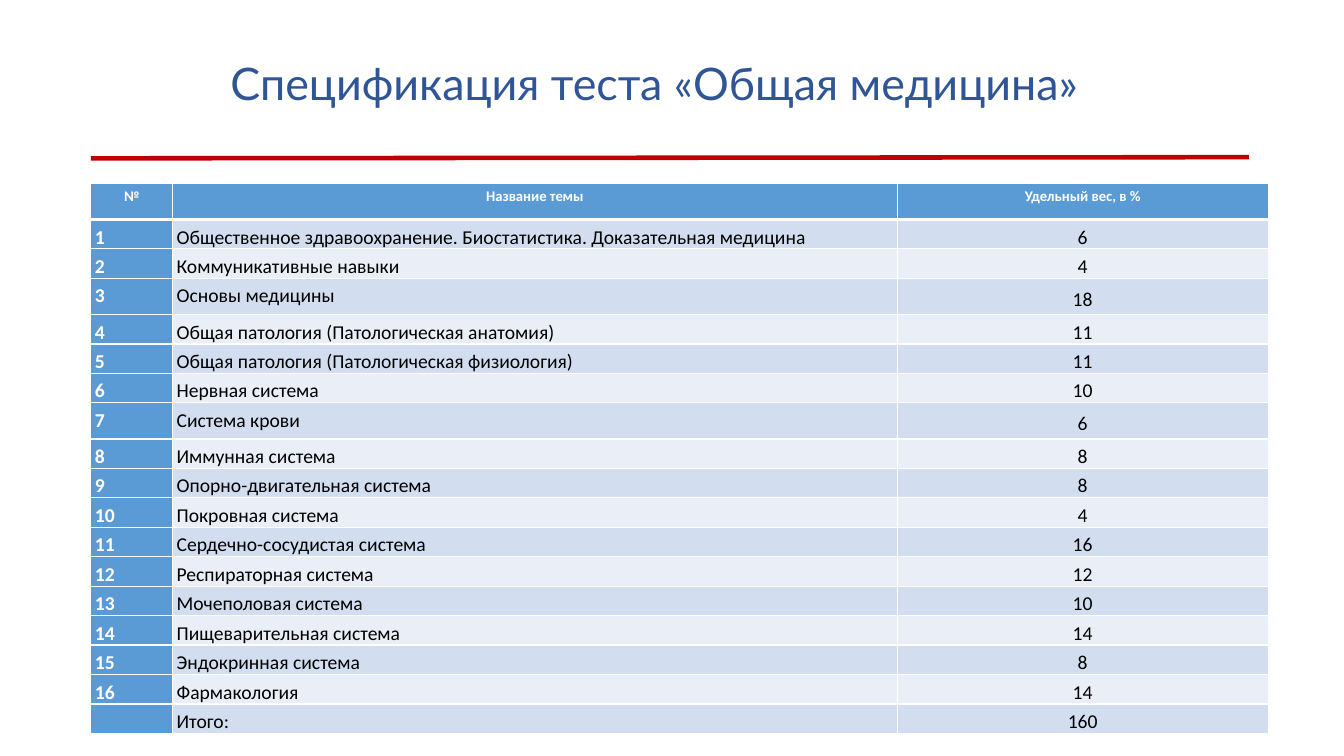
from dataclasses import dataclass
from typing import Any

from lxml import etree
from pptx import Presentation
from pptx.dml.color import RGBColor
from pptx.enum.shapes import MSO_CONNECTOR
from pptx.enum.text import MSO_ANCHOR, PP_ALIGN
from pptx.oxml.ns import qn
from pptx.util import Cm, Pt

LEFT, CENTER, JUSTIFY = PP_ALIGN.LEFT, PP_ALIGN.CENTER, PP_ALIGN.JUSTIFY
TOP, MIDDLE = MSO_ANCHOR.TOP, MSO_ANCHOR.MIDDLE
STRAIGHT = MSO_CONNECTOR.STRAIGHT

WHITE, BLACK, HEADER_BLUE = "FFFFFF", "000000", "5B9BD5"
BANDS = ("D2DEEF", "EAEFF7")
TITLE_BLUE, RULE_RED = "2F5597", "C00000"
THIN, THICK = 1, 3
BODY_SIZE = 14


@dataclass(frozen=True)
class Topic:
    name: str
    weight: int
    height: float = 0.69


@dataclass(frozen=True)
class CellStyle:
    fill: str
    color: str
    size: float
    bold: bool
    align: Any
    anchor: Any = TOP


HEADINGS = ("№", "Название темы", "Удельный вес, в %")
HEADER_HEIGHT = 0.91
COLUMN_WIDTHS = (2.06, 18.26, 9.35)
TOPICS = (
    Topic("Общественное здравоохранение. Биостатистика. Доказательная медицина", 6),
    Topic("Коммуникативные навыки", 4),
    Topic("Основы медицины", 18, 0.91),
    Topic("Общая патология (Патологическая анатомия)", 11),
    Topic("Общая патология (Патологическая физиология)", 11),
    Topic("Нервная система", 10),
    Topic("Система крови", 6, 0.91),
    Topic("Иммунная система", 8),
    Topic("Опорно-двигательная система", 8),
    Topic("Покровная система", 4),
    Topic("Сердечно-сосудистая система", 16),
    Topic("Респираторная система", 12),
    Topic("Мочеполовая система", 10),
    Topic("Пищеварительная система", 14),
    Topic("Эндокринная система", 8),
    Topic("Фармакология", 14),
)


def rgb(value: str) -> RGBColor:
    return RGBColor.from_string(value)


def apply(target: Any, values: dict[str, Any]) -> None:
    """Set each named attribute of the target."""
    for key, value in values.items():
        setattr(target, key, value)


def set_borders(cell: Any, top: float, bottom: float) -> None:
    properties = cell._tc.get_or_add_tcPr()
    widths = {"a:lnL": THIN, "a:lnR": THIN, "a:lnT": top, "a:lnB": bottom}
    for position, (tag, width) in enumerate(widths.items()):
        border = etree.Element(qn(tag), w=str(Pt(width)))
        fill = etree.SubElement(border, qn("a:solidFill"))
        etree.SubElement(fill, qn("a:srgbClr"), val=WHITE)
        properties.insert(position, border)


def fill_cell(cell: Any, text: str, style: CellStyle) -> None:
    apply(cell, {
        "margin_left": Cm(0.1), "margin_right": Cm(0.1),
        "margin_top": 0, "margin_bottom": 0,
        "vertical_anchor": style.anchor,
    })
    cell.fill.solid()
    cell.fill.fore_color.rgb = rgb(style.fill)
    paragraph = cell.text_frame.paragraphs[0]
    apply(paragraph, {"alignment": style.align, "line_spacing": 1.25})
    if not text:
        # An empty cell still takes its height from the end-of-paragraph size.
        end = etree.SubElement(paragraph._p, qn("a:endParaRPr"))
        end.set("sz", str(int(style.size * 100)))
        return
    run = paragraph.add_run()
    run.text = text
    apply(run.font, {"name": "Calibri", "size": Pt(style.size), "bold": style.bold})
    run.font.color.rgb = rgb(style.color)


def add_title(slide: Any) -> None:
    box = slide.shapes.add_textbox(Cm(1.47), Cm(1.02), Cm(30.05), Cm(3.68))
    frame = box.text_frame
    apply(frame, {
        "word_wrap": True, "vertical_anchor": MIDDLE, "margin_bottom": Cm(1.5),
    })
    paragraph = frame.paragraphs[0]
    apply(paragraph, {"alignment": CENTER, "line_spacing": 0.9})
    run = paragraph.add_run()
    run.text = "Спецификация теста «Общая медицина»"
    apply(run.font, {"name": "Lato", "size": Pt(32)})
    run.font.color.rgb = rgb(TITLE_BLUE)


def add_title_rule(slide: Any) -> None:
    rule = slide.shapes.add_connector(
        STRAIGHT, Cm(2.29), Cm(3.99), Cm(31.47), Cm(3.96))
    rule.line.width = Pt(3.25)
    rule.line.color.rgb = rgb(RULE_RED)
    etree.SubElement(rule._element.spPr, qn("a:effectLst"))


def add_topic_table(slide: Any) -> None:
    total = Topic("Итого:", sum(topic.weight for topic in TOPICS))
    rows = (*TOPICS, total)
    heights = (HEADER_HEIGHT, *(row.height for row in rows))
    table = slide.shapes.add_table(
        len(heights), len(COLUMN_WIDTHS), Cm(2.29), Cm(4.62),
        Cm(sum(COLUMN_WIDTHS)), Cm(sum(heights))).table
    apply(table, {"first_col": True})
    for column, width in zip(table.columns, COLUMN_WIDTHS):
        column.width = Cm(width)
    for table_row, height in zip(table.rows, heights):
        table_row.height = Cm(height)

    heading_style = CellStyle(HEADER_BLUE, WHITE, 10.5, True, CENTER)
    for column, heading in enumerate(HEADINGS):
        fill_cell(table.cell(0, column), heading, heading_style)
        set_borders(table.cell(0, column), THIN, THICK)

    number_style = CellStyle(HEADER_BLUE, WHITE, BODY_SIZE, True, JUSTIFY)
    for number, row in enumerate(rows, start=1):
        band = BANDS[(number - 1) % len(BANDS)]
        contents = (
            ("" if row is total else str(number), number_style),
            (row.name, CellStyle(band, BLACK, BODY_SIZE, False, LEFT)),
            (str(row.weight),
             CellStyle(band, BLACK, BODY_SIZE, False, CENTER, MIDDLE)),
        )
        for column, (text, style) in enumerate(contents):
            fill_cell(table.cell(number, column), text, style)
            set_borders(table.cell(number, column),
                        THICK if number == 1 else THIN, THIN)


def main() -> None:
    presentation = Presentation()
    apply(presentation, {"slide_width": Cm(33.87), "slide_height": Cm(19.05)})
    slide = presentation.slides.add_slide(presentation.slide_layouts[6])
    add_title(slide)
    add_title_rule(slide)
    add_topic_table(slide)
    presentation.save("out.pptx")


if __name__ == "__main__":
    main()
